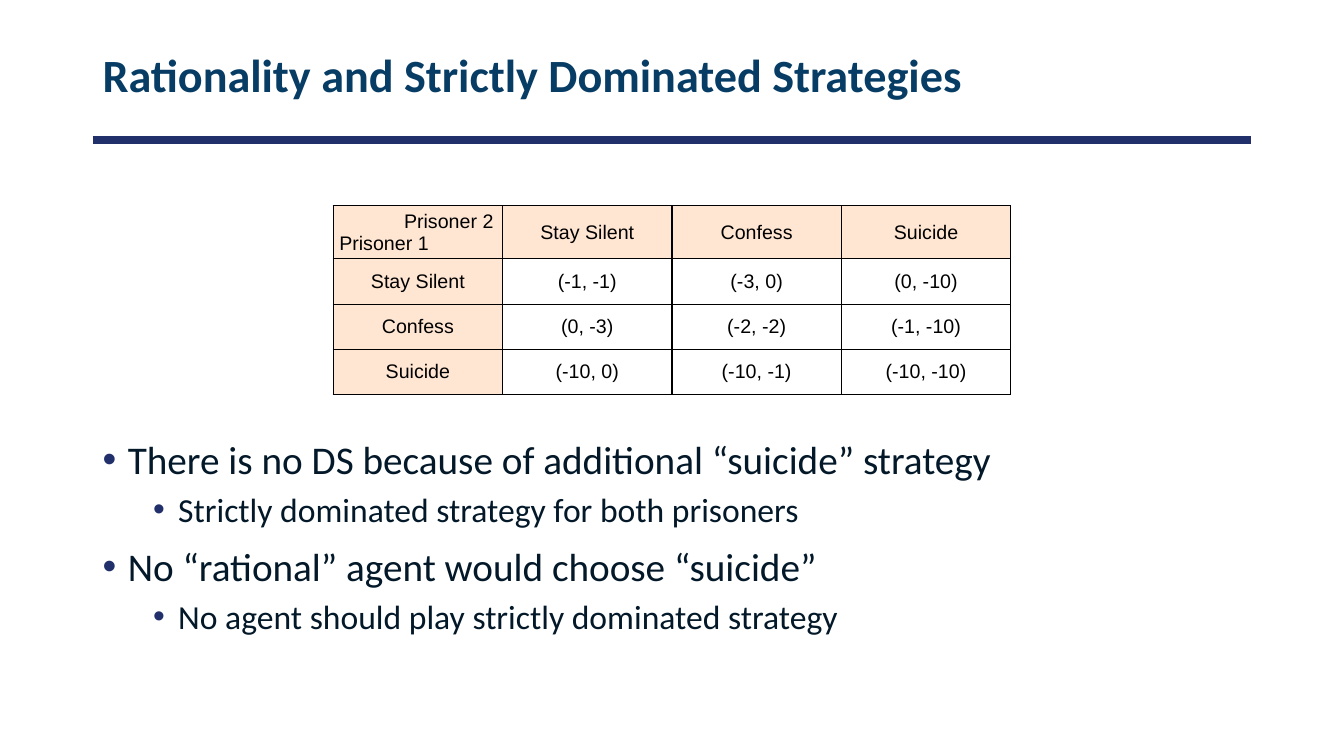
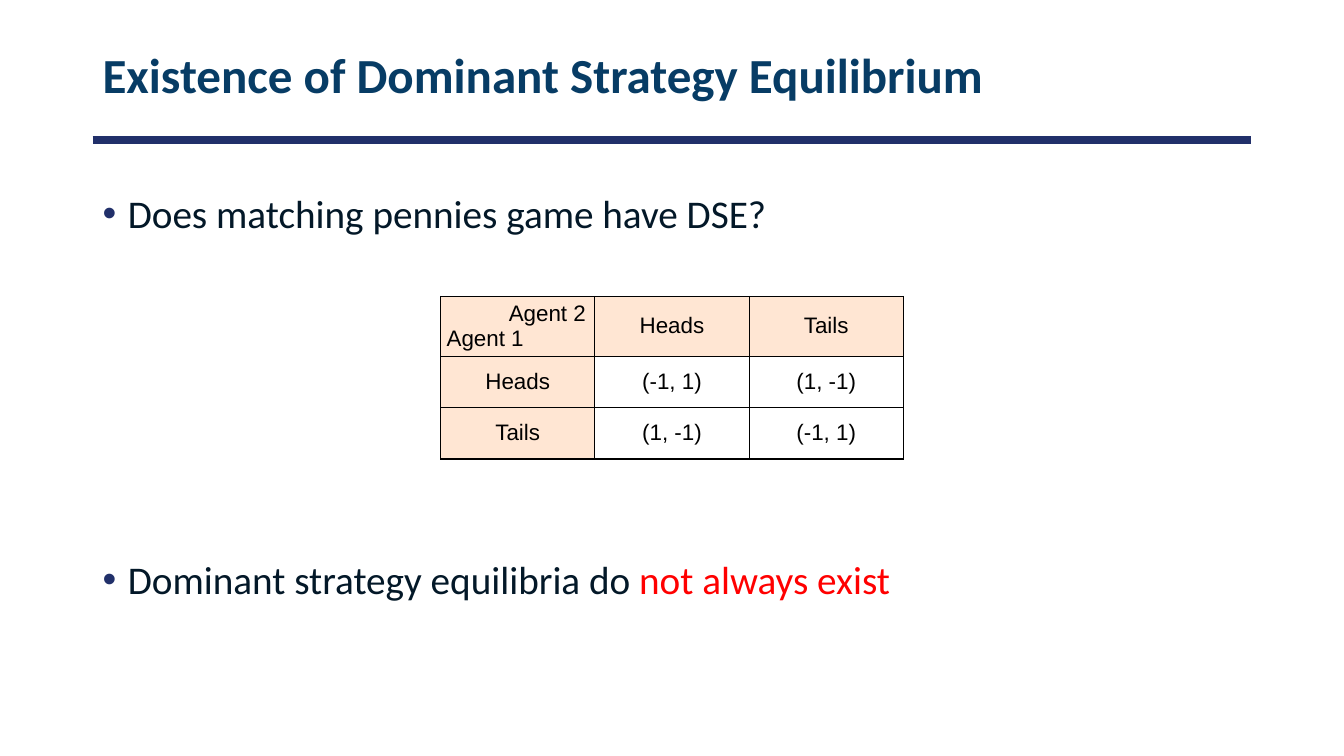
from dataclasses import dataclass

from lxml import etree
from pptx import Presentation
from pptx.dml.color import RGBColor
from pptx.enum.shapes import MSO_CONNECTOR
from pptx.enum.text import MSO_ANCHOR, PP_ALIGN
from pptx.oxml import parse_xml
from pptx.oxml.ns import nsdecls, qn
from pptx.util import Inches, Pt

STRAIGHT = MSO_CONNECTOR.STRAIGHT
MIDDLE = MSO_ANCHOR.MIDDLE
LEFT, CENTER, RIGHT = PP_ALIGN.LEFT, PP_ALIGN.CENTER, PP_ALIGN.RIGHT


@dataclass(frozen=True)
class Theme:
    title: str = "073C65"
    rule: str = "21306A"
    text: str = "031828"
    accent: str = "FF0000"
    header: str = "FFE6D3"
    grid: str = "000000"
    text_font: str = "Calibri"
    table_font: str = "Arial"
    level_sizes: tuple = (28, 24)
    level_gaps: tuple = (9, 5)


theme = Theme()
WIDTH, HEIGHT = Inches(13.33), Inches(7.5)
MARGIN = int(WIDTH * 0.069)
CONTENT = WIDTH - 2 * MARGIN
RULE_TOP = int(HEIGHT * 0.185)

# Slide contents; bullet blocks hold (top share, [(level, plain text, accented text)])
slides = [
    {
        "title": "Rationality and Strictly Dominated Strategies",
        "title_size": 33,
        "bullets": [
            (0.569, 0.332, [
                (0, "There is no DS because of additional “suicide” strategy", ""),
                (1, "Strictly dominated strategy for both prisoners", ""),
                (0, "No “rational” agent would choose “suicide”", ""),
                (1, "No agent should play strictly dominated strategy", ""),
            ]),
        ],
        "players": ("Prisoner 2", "Prisoner 1"),
        "moves": ["Stay Silent", "Confess", "Suicide"],
        "payoffs": [
            ["(-1, -1)", "(-3, 0)", "(0, -10)"],
            ["(0, -3)", "(-2, -2)", "(-1, -10)"],
            ["(-10, 0)", "(-10, -1)", "(-10, -10)"],
        ],
        "table_top": 0.272, "column": 1.68, "rows": (0.52, 0.45), "table_size": 14,
    },
    {
        "title": "Existence of Dominant Strategy Equilibrium",
        "title_size": 35,
        "bullets": [
            (0.244, 0.09, [(0, "Does matching pennies game have DSE?", "")]),
            (0.728, 0.09, [(0, "Dominant strategy equilibria do ", "not always exist")]),
        ],
        "players": ("Agent 2", "Agent 1"),
        "moves": ["Heads", "Tails"],
        "payoffs": [["(-1, 1)", "(1, -1)"], ["(1, -1)", "(-1, 1)"]],
        "table_top": 0.392, "column": 1.53, "rows": (0.59, 0.51), "table_size": 16,
    },
]


def style(font, name, size, color, bold=False):
    font.name, font.size, font.bold = name, Pt(size), bold
    font.color.rgb = RGBColor.from_string(color)


def add_text_frame(page, top, height):
    box = page.shapes.add_textbox(MARGIN, int(HEIGHT * top), CONTENT, int(HEIGHT * height))
    box.text_frame.word_wrap = True
    return box.text_frame


deck = Presentation()
deck.slide_width, deck.slide_height = WIDTH, HEIGHT
blank = deck.slide_layouts[6]

for content in slides:
    page = deck.slides.add_slide(blank)

    # Title and rule
    rule = page.shapes.add_connector(STRAIGHT, MARGIN, RULE_TOP, MARGIN + CONTENT, RULE_TOP)
    rule.line.color.rgb = RGBColor.from_string(theme.rule)
    rule.line.width = Pt(6)
    etree.SubElement(rule.line._get_or_add_ln().getparent(), qn("a:effectLst"))

    frame = add_text_frame(page, 0.031, 0.144)
    frame.vertical_anchor = MIDDLE
    para = frame.paragraphs[0]
    para.text = content["title"]
    para.line_spacing = 0.9
    style(para.font, theme.text_font, content["title_size"], theme.title, True)

    # Bullets
    for top, height, lines in content["bullets"]:
        frame = add_text_frame(page, top, height)
        for index, (level, plain, accented) in enumerate(lines):
            para = frame.add_paragraph() if index else frame.paragraphs[0]
            para.level = level
            para.space_before = Pt(theme.level_gaps[level])
            properties = para._p.get_or_add_pPr()
            properties.set("marL", str(Inches(0.25 + 0.5 * level)))
            properties.set("indent", str(Inches(-0.25)))
            for markup in (
                f'<a:buClr {nsdecls("a")}><a:srgbClr val="{theme.rule}"/></a:buClr>',
                f'<a:buFont {nsdecls("a")} typeface="Arial"/>',
                f'<a:buChar {nsdecls("a")} char="•"/>',
            ):
                properties.append(parse_xml(markup))
            style(para.font, theme.text_font, theme.level_sizes[level], theme.text)
            para.add_run().text = plain
            if accented:
                span = para.add_run()
                span.text = accented
                span.font.color.rgb = RGBColor.from_string(theme.accent)

    # Payoff table, centred on the slide
    moves = content["moves"]
    count = len(moves) + 1
    head_height, row_height = (Inches(height) for height in content["rows"])
    column = Inches(content["column"])
    table = page.shapes.add_table(
        count, count, (WIDTH - count * column) // 2, int(HEIGHT * content["table_top"]),
        count * column, head_height + (count - 1) * row_height).table
    table.first_row = table.horz_banding = False
    for index in range(count):
        table.columns[index].width = column
        table.rows[index].height = row_height if index else head_height

    corner = "\n".join(content["players"])
    grid = [[corner, *moves]]
    grid += [[move, *payoffs] for move, payoffs in zip(moves, content["payoffs"])]
    for row, texts in enumerate(grid):
        for col, text in enumerate(texts):
            cell = table.cell(row, col)
            cell.text = text
            cell.vertical_anchor = MIDDLE
            cell.margin_left = cell.margin_right = Inches(0.06)
            cell.margin_top = cell.margin_bottom = Inches(0.03)
            for side in ("lnL", "lnR", "lnT", "lnB"):
                cell._tc.get_or_add_tcPr().append(parse_xml(
                    f'<a:{side} {nsdecls("a")} w="{Pt(1)}"><a:solidFill>'
                    f'<a:srgbClr val="{theme.grid}"/></a:solidFill></a:{side}>'))
            if row == 0 or col == 0:
                cell.fill.solid()
                cell.fill.fore_color.rgb = RGBColor.from_string(theme.header)
            else:
                cell.fill.background()
            for para in cell.text_frame.paragraphs:
                para.alignment = CENTER
                style(para.font, theme.table_font, content["table_size"], theme.grid)

    # Corner cell: column player on the right, row player on the left
    corner_cell = table.cell(0, 0)
    corner_cell.margin_right = Inches(0.09)
    for para, side in zip(corner_cell.text_frame.paragraphs, (RIGHT, LEFT)):
        para.alignment = side

deck.save("out.pptx")
